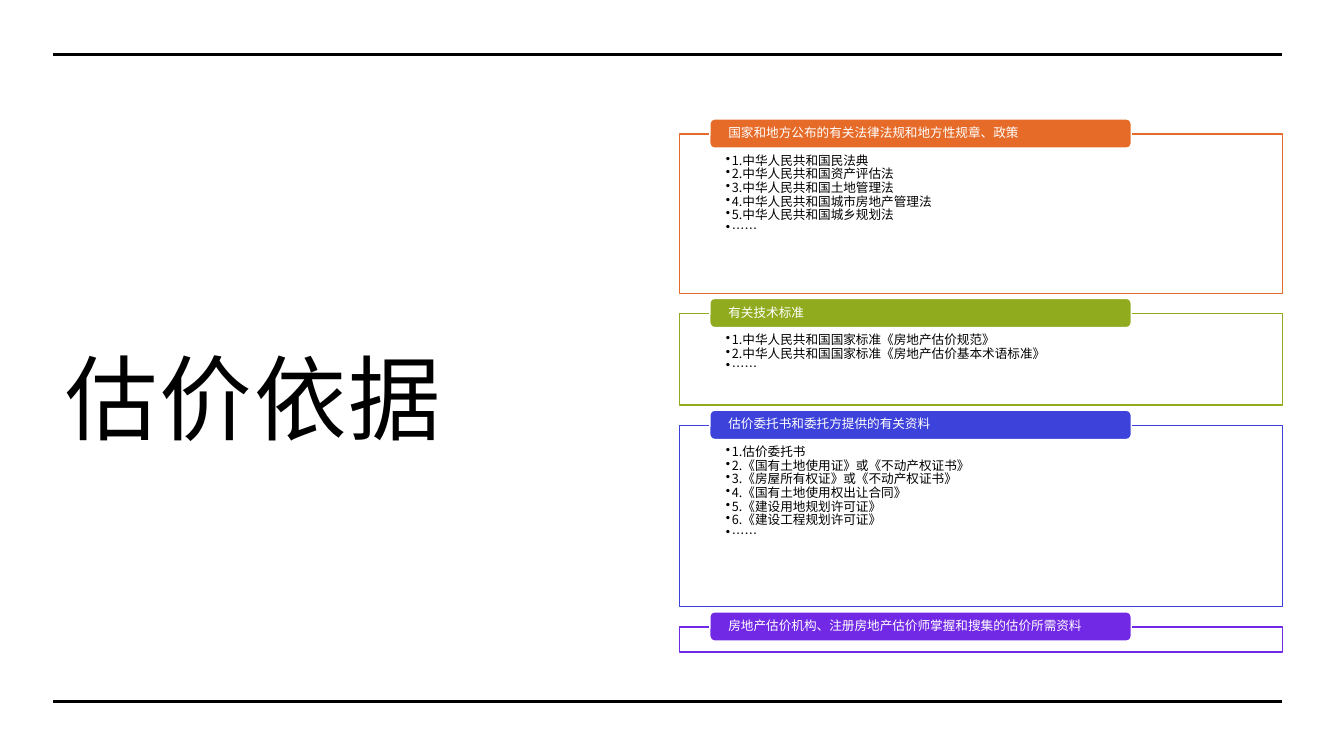
from lxml import etree
from pptx import Presentation
from pptx.dml.color import RGBColor
from pptx.enum.shapes import MSO_CONNECTOR, MSO_SHAPE
from pptx.enum.text import MSO_ANCHOR, MSO_AUTO_SIZE, PP_ALIGN
from pptx.oxml.ns import qn
from pptx.util import Inches, Pt

STRAIGHT = MSO_CONNECTOR.STRAIGHT
RECTANGLE, ROUNDED = MSO_SHAPE.RECTANGLE, MSO_SHAPE.ROUNDED_RECTANGLE
TOP, MIDDLE = MSO_ANCHOR.TOP, MSO_ANCHOR.MIDDLE
NO_AUTOFIT = MSO_AUTO_SIZE.NONE
LEFT = PP_ALIGN.LEFT

BLACK = RGBColor(0x00, 0x00, 0x00)
WHITE = RGBColor(0xFF, 0xFF, 0xFF)
ORANGE = RGBColor(0xE6, 0x6B, 0x29)
GREEN = RGBColor(0x91, 0xAB, 0x1F)
BLUE = RGBColor(0x3D, 0x42, 0xDB)
PURPLE = RGBColor(0x72, 0x29, 0xE6)

SECTIONS = [
    (ORANGE, 1.58, "国家和地方公布的有关法律法规和地方性规章、政策",
     ["1.中华人民共和国民法典", "2.中华人民共和国资产评估法",
      "3.中华人民共和国土地管理法", "4.中华人民共和国城市房地产管理法",
      "5.中华人民共和国城乡规划法", "……"]),
    (GREEN, 0.91, "有关技术标准",
     ["1.中华人民共和国国家标准《房地产估价规范》",
      "2.中华人民共和国国家标准《房地产估价基本术语标准》", "……"]),
    (BLUE, 1.8, "估价委托书和委托方提供的有关资料",
     ["1.估价委托书", "2.《国有土地使用证》或《不动产权证书》",
      "3.《房屋所有权证》或《不动产权证书》", "4.《国有土地使用权出让合同》",
      "5.《建设用地规划许可证》", "6.《建设工程规划许可证》", "……"]),
    (PURPLE, 0.25, "房地产估价机构、注册房地产估价师掌握和搜集的估价所需资料", []),
]
FRAME_LEFT, FRAME_WIDTH, FIRST_TOP, GAP = 6.74, 5.98, 1.33, 0.2
TAB_INDENT, TAB_RISE, TAB_WIDTH, TAB_HEIGHT = 0.3, 0.15, 4.18, 0.29


def apply(target, values):
    for name, value in values.items():
        setattr(target, name, value)


class SlideBuilder:
    font_name = "Noto Sans CJK SC"

    def __init__(self, deck):
        self.slide = deck.slides.add_slide(deck.slide_layouts[5])

    def fill_text(self, shape, lines, size, color, insets, anchor, spacing, bullet=False):
        frame = shape.text_frame
        sides = ("margin_left", "margin_top", "margin_right", "margin_bottom")
        apply(frame, dict(zip(sides, map(Inches, insets))))
        apply(frame, {"word_wrap": True, "auto_size": NO_AUTOFIT, "vertical_anchor": anchor})
        for index, line in enumerate(lines):
            para = frame.add_paragraph() if index else frame.paragraphs[0]
            apply(para, {"alignment": LEFT, "line_spacing": spacing,
                         "space_before": Pt(0), "space_after": Pt(0)})
            if bullet:
                self.add_bullet(para)
            span = para.add_run()
            span.text = line
            apply(span.font, {"name": self.font_name, "size": Pt(size), "bold": False})
            span.font.color.rgb = color
            properties = span.font._element
            etree.SubElement(properties, qn("a:ea")).set("typeface", self.font_name)

    def add_bullet(self, para):
        para.level = 1
        properties = para._p.get_or_add_pPr()
        properties.set("marL", str(Inches(0.06)))
        properties.set("indent", str(-Inches(0.06)))
        etree.SubElement(properties, qn("a:buChar")).set("char", "•")

    def title(self, text, left, top, width, height):
        title = self.slide.shapes.title
        apply(title, {"left": Inches(left), "top": Inches(top),
                      "width": Inches(width), "height": Inches(height)})
        self.fill_text(title, [text], 66, BLACK, (0.12, 0.12, 0.12, 0.1), MIDDLE, 1.18)
        title.text_frame.paragraphs[0].runs[0].font._element.set("spc", "150")

    def rule(self, left, right, y):
        line = self.slide.shapes.add_connector(
            STRAIGHT, Inches(left), Inches(y), Inches(right), Inches(y))
        line.line.color.rgb = BLACK
        line.line.width = Pt(2.25)
        etree.SubElement(line._element.spPr, qn("a:effectLst"))

    def panel(self, kind, left, top, width, height, fill, outline):
        panel = self.slide.shapes.add_shape(
            kind, Inches(left), Inches(top), Inches(width), Inches(height))
        panel.shadow.inherit = False
        panel.fill.solid()
        panel.fill.fore_color.rgb = fill
        panel.line.color.rgb = outline
        panel.line.width = Pt(1)
        return panel

    def section(self, top, color, height, heading, items):
        frame = self.panel(RECTANGLE, FRAME_LEFT, top, FRAME_WIDTH, height, WHITE, color)
        self.fill_text(frame, items, 9, BLACK, (0.46, 0.2, 0.46, 0.07), TOP, 0.9, bullet=True)
        tab = self.panel(ROUNDED, FRAME_LEFT + TAB_INDENT, top - TAB_RISE,
                         TAB_WIDTH, TAB_HEIGHT, color, WHITE)
        self.fill_text(tab, [heading], 9, WHITE, (0.17, 0, 0.17, 0), MIDDLE, 0.9)


def main():
    deck = Presentation()
    deck.slide_width, deck.slide_height = Inches(13.33), Inches(7.5)
    page = SlideBuilder(deck)
    page.title("估价依据", 0.53, 0.95, 6.14, 5.75)
    for y in (0.54, 6.96):
        page.rule(0.53, 12.72, y)
    top = FIRST_TOP
    for color, height, heading, items in SECTIONS:
        page.section(top, color, height, heading, items)
        top += height + GAP
    deck.save("out.pptx")


if __name__ == "__main__":
    main()
